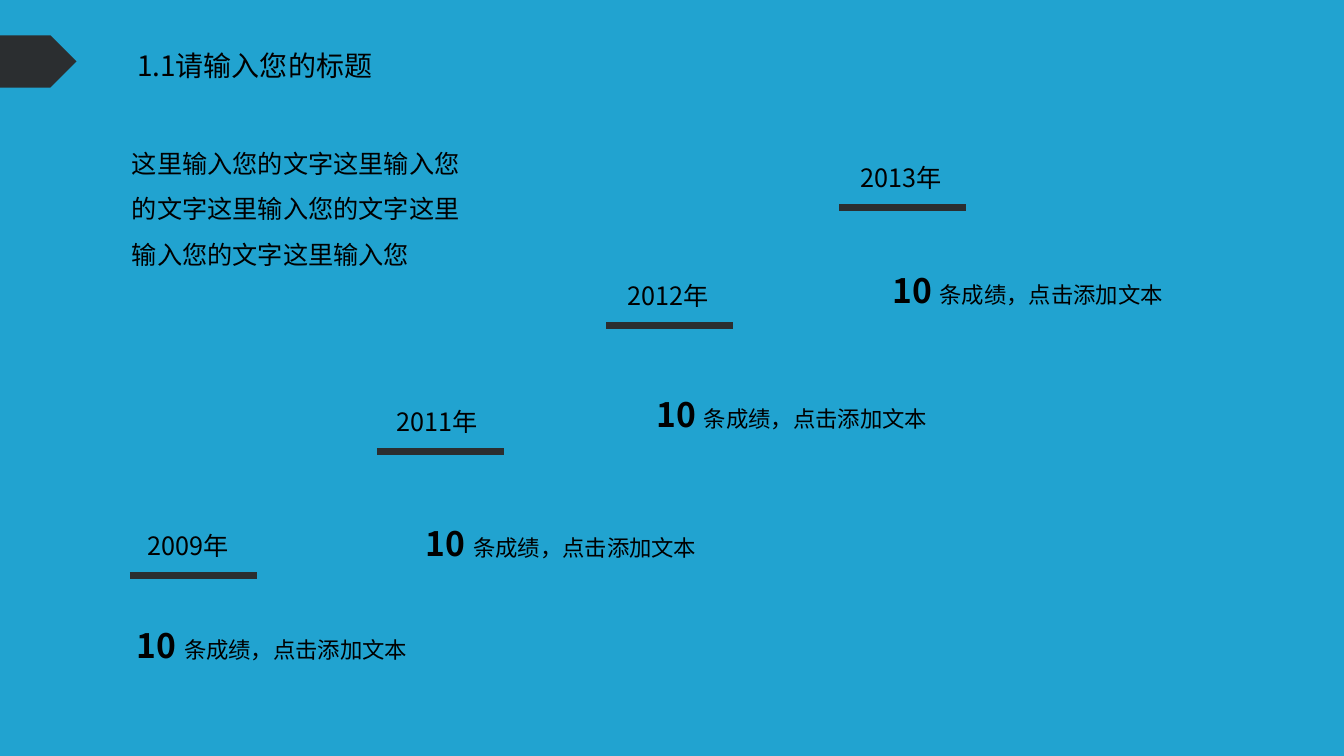
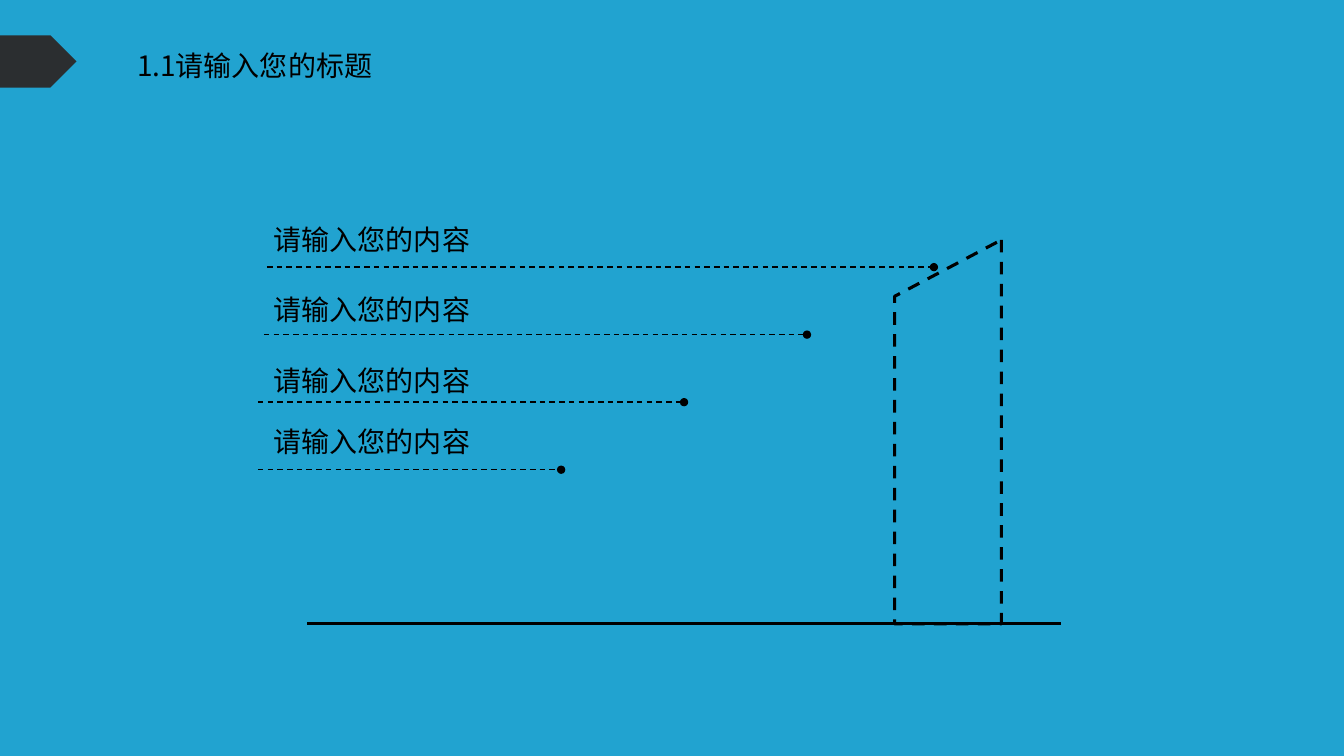
import lxml.etree
import pptx
import pptx.dml.color
import pptx.enum.dml
import pptx.enum.shapes
import pptx.enum.text
import pptx.oxml.ns
import pptx.util

Inches = pptx.util.Inches
Pt = pptx.util.Pt
qn = pptx.oxml.ns.qn
ALIGN = pptx.enum.text.PP_ALIGN
SHAPES = pptx.enum.shapes.MSO_SHAPE
DASH = pptx.enum.dml.MSO_LINE.DASH


def color(hex_string):
    return pptx.dml.color.RGBColor.from_string(hex_string)


class Deck:
    """Holds the shared style and the slide being built."""

    FONT = "Noto Sans CJK SC"
    INK = "000000"
    DARK = "2B2E30"
    BACKGROUND = "21A3D0"
    TITLE_ONLY = 5
    TITLE_AND_BODY = 1

    def __init__(self):
        self.presentation = pptx.Presentation()
        self.presentation.slide_width = Inches(13.34)
        self.presentation.slide_height = Inches(7.5)
        background = self.presentation.slide_master.background.fill
        background.solid()
        background.fore_color.rgb = color(self.BACKGROUND)

    def new_slide(self, title, layout):
        layouts = self.presentation.slide_layouts
        self.slide = self.presentation.slides.add_slide(layouts[layout])
        self.fill_box(self.slide.shapes.title, (1.26, 0.43, 2.56, 0.44), [(title, 20, False)])
        marker = self.slide.shapes.add_shape(
            SHAPES.PENTAGON, 0, Inches(0.35), Inches(0.76), Inches(0.52))
        marker.shadow.inherit = False
        marker.fill.solid()
        marker.fill.fore_color.rgb = color(self.DARK)
        marker.line.fill.background()

    def fill_box(self, box, place, runs, align=ALIGN.LEFT, wrap=True):
        box.left, box.top, box.width, box.height = map(Inches, place)
        frame = box.text_frame
        frame.word_wrap = wrap
        frame.auto_size = pptx.enum.text.MSO_AUTO_SIZE.NONE
        frame.vertical_anchor = pptx.enum.text.MSO_ANCHOR.TOP
        paragraph = frame.paragraphs[0]
        paragraph.alignment = align
        for words, size, bold in runs:
            run = paragraph.add_run()
            run.text = words
            run.font.size = Pt(size)
            run.font.bold = bold
            run.font.name = self.FONT
            run.font.color.rgb = color(self.INK)
            east_asian = lxml.etree.SubElement(run._r.get_or_add_rPr(), qn("a:ea"))
            east_asian.set("typeface", self.FONT)
        return paragraph

    def text(self, place, runs, align=ALIGN.LEFT, wrap=True):
        box = self.slide.shapes.add_textbox(*map(Inches, place))
        self.fill_box(box, place, runs, align, wrap)

    def body(self, place, words, size):
        paragraph = self.fill_box(self.slide.placeholders[1], place, [(words, size, False)])
        properties = paragraph._p.get_or_add_pPr()
        properties.set("marL", "0")
        properties.set("indent", "0")
        lxml.etree.SubElement(properties, qn("a:buNone"))
        paragraph.line_spacing = 1.5
        paragraph.space_before = Pt(0)

    def stroke(self, line, ink, width, dash=None):
        line.color.rgb = color(ink)
        line.width = Pt(width)
        if dash is not None:
            line.dash_style = dash

    def rule(self, left, right, y, ink, width, dash=None, dot=False):
        connector = self.slide.shapes.add_connector(
            pptx.enum.shapes.MSO_CONNECTOR.STRAIGHT,
            Inches(left), Inches(y), Inches(right), Inches(y))
        self.stroke(connector.line, ink, width, dash)
        properties = connector.element.spPr
        if dot:
            end = lxml.etree.SubElement(properties.find(qn("a:ln")), qn("a:tailEnd"))
            end.set("type", "oval")
        lxml.etree.SubElement(properties, qn("a:effectLst"))

    def outline(self, points, width, dash):
        corners = [(Inches(x), Inches(y)) for x, y in points]
        builder = self.slide.shapes.build_freeform(*corners[0])
        builder.add_line_segments(corners[1:], close=True)
        bar = builder.convert_to_shape()
        bar.shadow.inherit = False
        bar.fill.background()
        self.stroke(bar.line, self.INK, width, dash)


def build_timeline(deck, title):
    deck.new_slide(title, Deck.TITLE_AND_BODY)
    deck.body((1.21, 1.27, 3.47, 1.46), "这里输入您的文字" * 4 + "这里输入您", 18)
    milestones = [
        ("2009年", 1.29, 1.29, 5.71, 1.26, 6.15),
        ("2011年", 3.76, 3.74, 4.48, 4.13, 5.14),
        ("2012年", 6.06, 6.02, 3.23, 6.42, 3.86),
        ("2013年", 8.37, 8.33, 2.06, 8.76, 2.63),
    ]
    achievement = [("10 ", 24, True), ("条成绩，点击添加文本", 16, False)]
    for year, year_left, rule_left, rule_y, result_left, result_top in milestones:
        deck.text((year_left, rule_y - 0.5, 1.15, 0.44), [(year, 18, False)],
                  ALIGN.CENTER, wrap=False)
        deck.rule(rule_left, rule_left + 1.26, rule_y, Deck.DARK, 5)
        deck.text((result_left, result_top, 4.07, 0.51), achievement)


def build_bar_outline(deck, title):
    deck.new_slide(title, Deck.TITLE_ONLY)
    ground = 6.19
    deck.outline([(9.94, 2.38), (9.94, ground), (8.88, ground), (8.88, 2.94)], 2.25, DASH)
    deck.rule(10.53, 3.05, ground, Deck.INK, 2.25)
    leaders = [(2.16, 2.65, 9.27), (2.85, 2.62, 8.01), (3.56, 2.56, 6.79), (4.16, 2.56, 5.57)]
    for index, (label_top, left, right) in enumerate(leaders):
        deck.rule(left, right, 2.65 + 0.67 * index, Deck.INK, 1, DASH, dot=True)
        deck.text((2.62, label_top, 2.16, 0.44), [("请输入您的内容", 20, False)], wrap=False)


def main():
    deck = Deck()
    title = "1.1请输入您的标题"
    build_timeline(deck, title)
    build_bar_outline(deck, title)
    deck.presentation.save("out.pptx")


if __name__ == "__main__":
    main()
